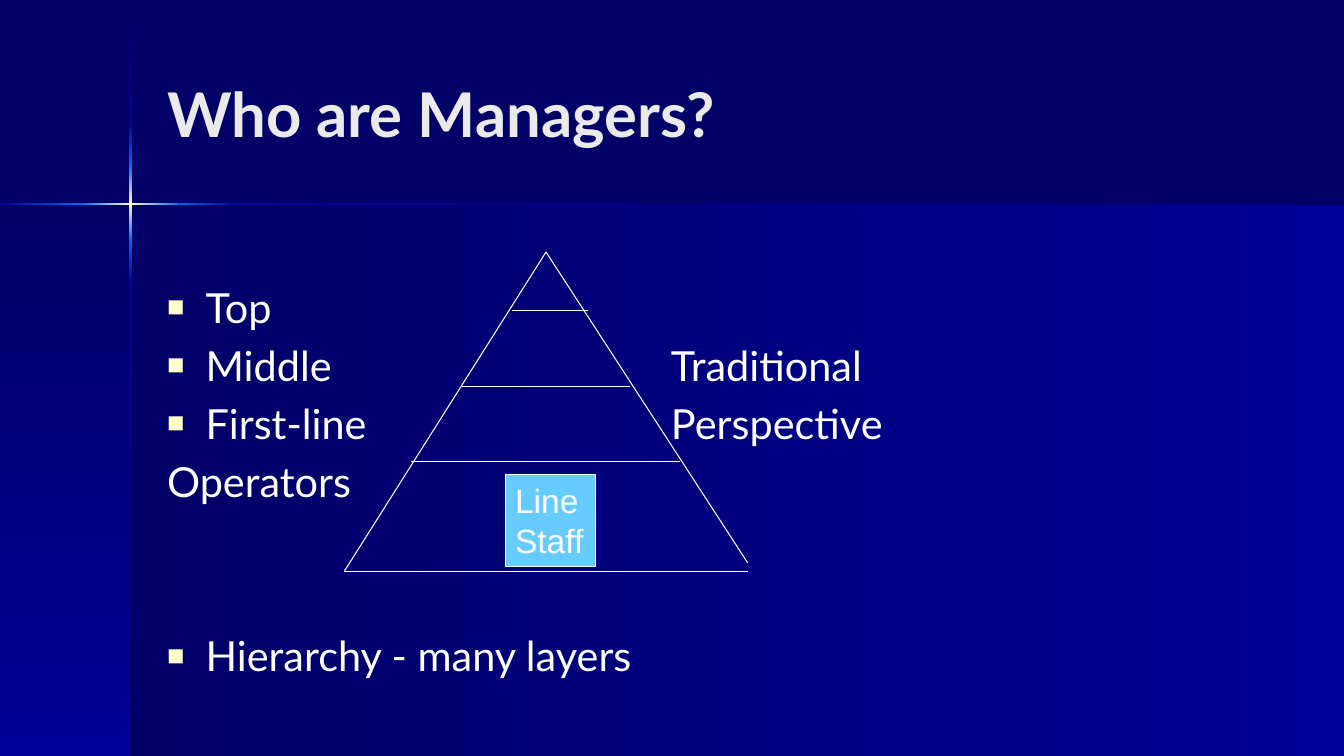
from dataclasses import dataclass
from itertools import pairwise

from pptx import Presentation
from pptx.dml.color import RGBColor
from pptx.enum.shapes import MSO_CONNECTOR, MSO_SHAPE
from pptx.enum.text import MSO_ANCHOR, MSO_AUTO_SIZE, PP_ALIGN
from pptx.oxml import parse_xml
from pptx.oxml.ns import nsdecls
from pptx.oxml.xmlchemy import OxmlElement
from pptx.util import Cm, Pt


@dataclass(frozen=True)
class Theme:
    navy: str = "000066"
    blue: str = "000099"
    azure: str = "0066FF"
    cream: str = "FFFFCC"
    sky: str = "66CCFF"
    white: str = "FFFFFF"
    title_color: str = "EAEAEA"
    font: str = "Lato"
    label_font: str = "Arial"
    title_size: float = 44
    body_size: float = 29.6
    label_size: float = 24
    line_width: float = 0.75


@dataclass(frozen=True)
class Band:
    left: float
    top: float
    width: float
    height: float
    colors: tuple[str, ...]
    angle: int


@dataclass(frozen=True)
class Edge:
    x1: float
    y1: float
    x2: float
    y2: float


@dataclass(frozen=True)
class Item:
    text: str
    bullet: bool = True
    space_before: float = 5.92


T = Theme()
WIDTH, HEIGHT = 33.87, 19.05
CROSS_X, CROSS_Y = 3.25, 5.11
RAY_W, RAY_H = 0.08, 0.05
INDENT = 0.97
ASIDE_TAB = 12.7

RAY_COLORS = [
    (T.navy, T.blue),
    (T.blue, T.azure),
    (T.azure, T.cream, T.azure),
    (T.azure, T.blue),
    (T.blue, T.navy),
]
RAY_YS = [0.03, 3.07, 4.19, 6.05, 7.16, HEIGHT]
RAY_XS = [0, 2.06, 4.52, 5.99, WIDTH]

BANDS = [
    Band(3.28, 5.13, WIDTH - 3.28, HEIGHT - 5.13, (T.navy, T.blue), 0),
    Band(0, 5.13, 3.28, HEIGHT - 5.13, (T.navy, T.blue), 90),
    *(Band(CROSS_X, a, RAY_W, b - a, colors, 90)
      for (a, b), colors in zip(pairwise(RAY_YS), RAY_COLORS)),
    *(Band(a, CROSS_Y, b - a, RAY_H, colors, 0)
      for (a, b), colors in zip(pairwise(RAY_XS), RAY_COLORS[1:])),
]

PYRAMID = [
    Edge(13.76, 6.35, 8.68, 14.39),
    Edge(13.76, 6.35, 18.84, 14.18),
    Edge(8.68, 14.39, 18.84, 14.39),
    Edge(12.91, 7.83, 14.82, 7.83),
    Edge(11.64, 9.74, 15.88, 9.74),
    Edge(10.37, 11.64, 17.15, 11.64),
]

ITEMS = [
    Item("Top", space_before=0),
    Item("Middle\tTraditional"),
    Item("First-line\tPerspective"),
    Item("Operators", bullet=False),
    Item("Hierarchy - many layers", space_before=88.8),
]


def rgb(color: str) -> RGBColor:
    return RGBColor.from_string(color)


def add_run(p, text: str, font: str, size: float, color: str, bold: bool = False) -> None:
    r = p.add_run()
    r.text = text
    r.font.name = font
    r.font.size = Pt(size)
    r.font.bold = bold
    r.font.color.rgb = rgb(color)


def add_band(s, band: Band) -> None:
    sp = s.shapes.add_shape(MSO_SHAPE.RECTANGLE, Cm(band.left), Cm(band.top),
                            Cm(band.width), Cm(band.height))
    sp.shadow.inherit = False
    sp.line.fill.background()
    last = len(band.colors) - 1
    stops = "".join(
        f'<a:gs pos="{100000 * i // last}"><a:srgbClr val="{color}"/></a:gs>'
        for i, color in enumerate(band.colors))
    gradient = parse_xml(
        f'<a:gradFill {nsdecls("a")} rotWithShape="1"><a:gsLst>{stops}</a:gsLst>'
        f'<a:lin ang="{band.angle * 60000}" scaled="0"/></a:gradFill>')
    sp.element.spPr.prstGeom.addnext(gradient)


def add_edge(s, edge: Edge) -> None:
    line = s.shapes.add_connector(MSO_CONNECTOR.STRAIGHT, Cm(edge.x1), Cm(edge.y1),
                                  Cm(edge.x2), Cm(edge.y2))
    line.line.color.rgb = rgb(T.white)
    line.line.width = Pt(T.line_width)
    line.element.spPr.append(OxmlElement("a:effectLst"))


def format_item(p, item: Item) -> None:
    """Give the paragraph its spacing, bullet and tab stop."""
    p.space_before = Pt(item.space_before)
    if not item.bullet:
        return
    pPr = p._p.get_or_add_pPr()
    pPr.set("marL", str(Cm(INDENT)))
    pPr.set("indent", str(-Cm(INDENT)))
    for xml in (
        f'<a:buClr {nsdecls("a")}><a:srgbClr val="{T.cream}"/></a:buClr>',
        f'<a:buSzPct {nsdecls("a")} val="70000"/>',
        f'<a:buFont {nsdecls("a")} typeface="{T.label_font}"/>',
        f'<a:buChar {nsdecls("a")} char="■"/>',
        f'<a:tabLst {nsdecls("a")}><a:tab pos="{Cm(ASIDE_TAB)}" algn="l"/></a:tabLst>',
    ):
        pPr.append(parse_xml(xml))


def set_title(s, text: str) -> None:
    title = s.shapes.title
    title.left, title.top, title.width, title.height = Cm(3.96), Cm(0.84), Cm(27.94), Cm(3.99)
    tf = title.text_frame
    tf.vertical_anchor = MSO_ANCHOR.MIDDLE
    p = tf.paragraphs[0]
    p.alignment = PP_ALIGN.LEFT
    add_run(p, text, T.font, T.title_size, T.title_color, bold=True)


def add_items(s, items: list[Item]) -> None:
    tf = s.shapes.add_textbox(Cm(3.96), Cm(6.98), Cm(27.94), Cm(9.96)).text_frame
    tf.word_wrap = True
    for i, item in enumerate(items):
        p = tf.add_paragraph() if i else tf.paragraphs[0]
        format_item(p, item)
        add_run(p, item.text, T.font, T.body_size, T.white)


def add_staff_label(s, lines: list[str]) -> None:
    sp = s.shapes.add_shape(MSO_SHAPE.RECTANGLE, Cm(12.73), Cm(11.96), Cm(2.29), Cm(2.31))
    sp.shadow.inherit = False
    sp.fill.solid()
    sp.fill.fore_color.rgb = rgb(T.sky)
    sp.line.color.rgb = rgb(T.white)
    sp.line.width = Pt(T.line_width)
    tf = sp.text_frame
    tf.word_wrap = False
    tf.auto_size = MSO_AUTO_SIZE.SHAPE_TO_FIT_TEXT
    tf.vertical_anchor = MSO_ANCHOR.TOP
    for i, text in enumerate(lines):
        p = tf.add_paragraph() if i else tf.paragraphs[0]
        p.alignment = PP_ALIGN.LEFT
        add_run(p, text, T.label_font, T.label_size, T.white)


def main() -> None:
    prs = Presentation()
    prs.slide_width, prs.slide_height = Cm(WIDTH), Cm(HEIGHT)
    s = prs.slides.add_slide(prs.slide_layouts[5])
    s.background.fill.solid()
    s.background.fill.fore_color.rgb = rgb(T.navy)
    for band in BANDS:
        add_band(s, band)
    set_title(s, "Who are Managers?")
    add_items(s, ITEMS)
    for edge in PYRAMID:
        add_edge(s, edge)
    add_staff_label(s, ["Line", "Staff"])
    prs.save("out.pptx")


if __name__ == "__main__":
    main()
